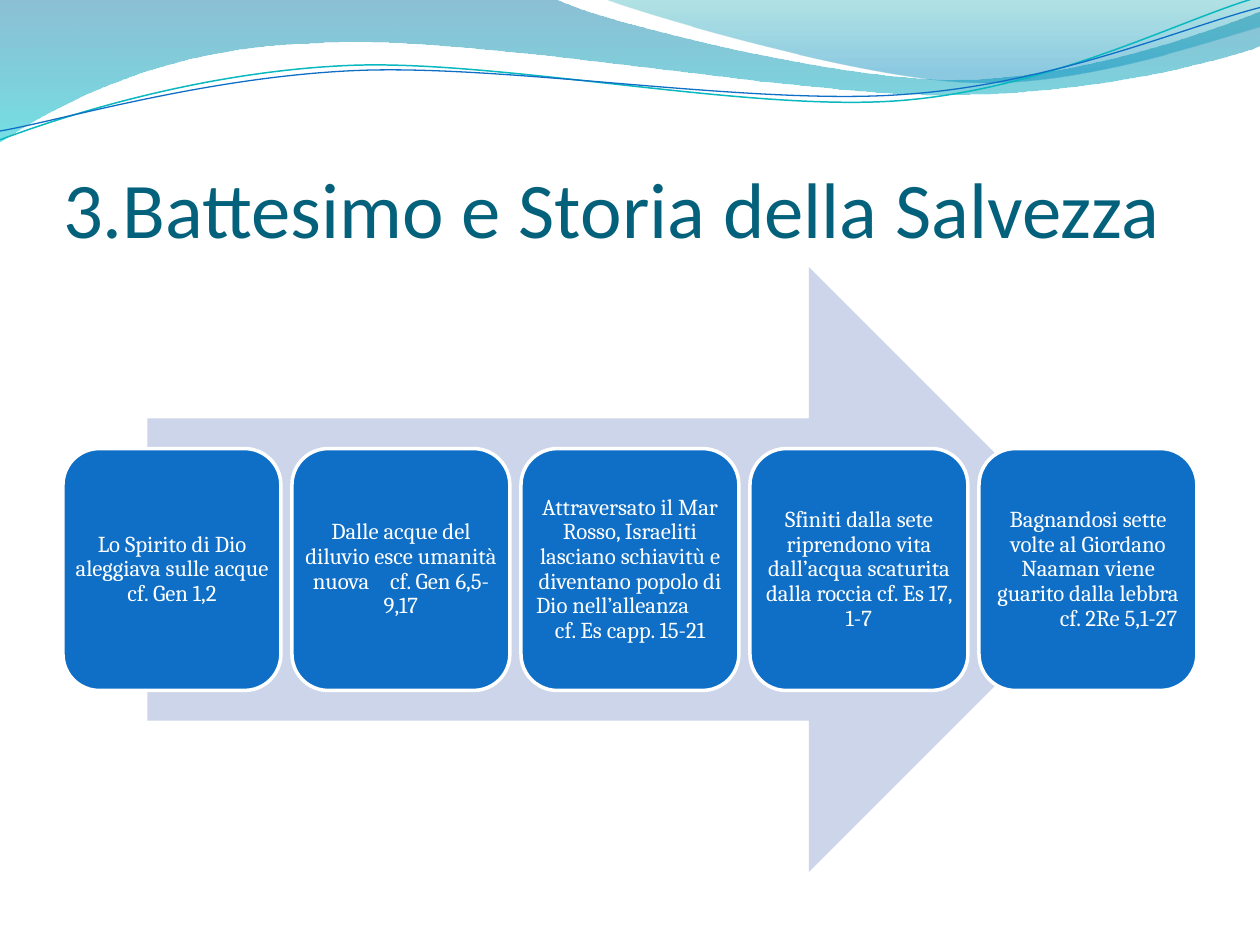
"""Build the slide on baptism and the history of salvation."""
from dataclasses import dataclass

from pptx import Presentation
from pptx.dml.color import RGBColor
from pptx.enum.shapes import MSO_SHAPE
from pptx.enum.text import MSO_ANCHOR, MSO_AUTO_SIZE, PP_ALIGN
from pptx.oxml.ns import qn
from pptx.shapes.autoshape import Shape
from pptx.slide import Slide
from pptx.util import Inches, Pt

ARROW, ROUNDED = MSO_SHAPE.RIGHT_ARROW, MSO_SHAPE.ROUNDED_RECTANGLE
MIDDLE, BOTTOM = MSO_ANCHOR.MIDDLE, MSO_ANCHOR.BOTTOM
CENTER, LEFT = PP_ALIGN.CENTER, PP_ALIGN.LEFT
NO_AUTOFIT = MSO_AUTO_SIZE.NONE
TITLE_ONLY = 5
BREAK = "\v"

COLORS = {
    "title": "04617B", "arrow": "CCD5EA", "card": "0F6FC6", "white": "FFFFFF",
    "deep": "0074A1", "aqua": "00C6CF", "teal": "00A1A9", "sky": "008BBF",
    "ribbon": "0AB8BF",
}


@dataclass
class Stop:
    position: float
    color: str
    opacity: int


@dataclass
class Wave:
    """An outline of pieces: 2 numbers for a line, 6 for a cubic curve."""
    start: tuple[float, float]
    pieces: list[tuple[float, ...]]
    stops: tuple[Stop, ...] = ()
    line: str = ""
    width: float = 0


@dataclass
class Gap:
    """A single space widened by some points."""
    points: float


WAVES = [
    Wave((0, 0), [
        (4.4, -0.01), (4.76, 0.17, 6.64, 0.63, 7.58, 0.63),
        (8.53, 0.63, 9.58, 0.26, 10, 0.09), (10.01, 0.36),
        (9.83, 0.44, 8.7, 0.76, 7.46, 0.75),
        (6.22, 0.75, 3.82, 0.28, 2.57, 0.34),
        (1.29, 0.36, 0.46, 0.83, -0.01, 1.13)],
        stops=(Stop(0, "deep", 45), Stop(1, "aqua", 55))),
    Wave((4.79, -0.01), [
        (5.09, 0.11, 6.82, 0.62, 7.69, 0.65),
        (8.56, 0.69, 9.61, 0.32, 10, 0.21), (10, 0)],
        stops=(Stop(0, "teal", 30), Stop(0.8, "sky", 45))),
    Wave((0, 1.11), [
        (0.48, 0.93, 1.58, 0.57, 2.77, 0.52),
        (3.95, 0.47, 5.93, 0.89, 7.13, 0.8),
        (8.33, 0.71, 9.38, 0.15, 9.98, -0.02)], line="ribbon", width=0.85),
    Wave((0, 1.04), [
        (0.47, 0.96, 1.64, 0.61, 2.83, 0.56),
        (4.03, 0.51, 5.97, 0.84, 7.17, 0.75),
        (8.36, 0.67, 9.41, 0.21, 10, 0.06)], line="card", width=0.75),
]

EVENTS = [
    ["Lo Spirito di Dio aleggiava sulle acque cf. Gen 1,2"],
    ["Dalle acque del diluvio esce umanità nuova", Gap(9), "cf. Gen 6,5-",
     BREAK, "9,17"],
    ["Attraversato il Mar Rosso, Israeliti lasciano schiavitù e diventano "
     "popolo di Dio nell’alleanza", Gap(17), BREAK, "cf. Es capp. 15-21"],
    ["Sfiniti dalla sete riprendono vita dall’acqua scaturita dalla roccia "
     "cf. Es 17, 1-7"],
    ["Bagnandosi sette volte al Giordano Naaman viene guarito dalla lebbra",
     BREAK, Gap(32), "cf. 2Re 5,1-27"],
]


def rgb(name: str) -> RGBColor:
    return RGBColor.from_string(COLORS[name])


def bend_curves(shape: Shape, pieces: list[tuple[float, ...]]) -> None:
    segments = iter(list(shape._element.iter(qn("a:lnTo"))))
    for piece in pieces:
        segment = next(segments)
        if len(piece) == 6:
            curve = segment.makeelement(qn("a:cubicBezTo"), {})
            segment.addprevious(curve)
            for control in (segment, next(segments), next(segments)):
                curve.append(control[0])
                control.getparent().remove(control)


def fill_gradient(shape: Shape, stops: tuple[Stop, ...]) -> None:
    shape.fill.gradient()
    shape.fill.gradient_angle = 270
    for target, stop in zip(shape.fill.gradient_stops, stops):
        target.position = stop.position
        target.color.rgb = rgb(stop.color)
    tints = shape.fill._xPr.iter(qn("a:srgbClr"))
    for tint, stop in zip(tints, stops):
        alpha = tint.makeelement(qn("a:alpha"), {"val": str(stop.opacity * 1000)})
        tint.append(alpha)


def add_wave(page: Slide, wave: Wave) -> None:
    builder = page.shapes.build_freeform(*map(Inches, wave.start))
    points = [(Inches(piece[at]), Inches(piece[at + 1]))
              for piece in wave.pieces for at in range(0, len(piece), 2)]
    builder.add_line_segments(points, close=bool(wave.stops))
    shape = builder.convert_to_shape()
    bend_curves(shape, wave.pieces)
    shape.shadow.inherit = False
    if wave.stops:
        fill_gradient(shape, wave.stops)
        shape.line.fill.background()
    else:
        shape.fill.background()
        shape.line.color.rgb = rgb(wave.line)
        shape.line.width = Pt(wave.width)


def add_title(page: Slide, text: str) -> None:
    title = page.shapes.title
    title.left, title.top = Inches(0.5), Inches(0.77)
    title.width, title.height = Inches(9), Inches(1.25)
    frame = title.text_frame
    frame.text = text
    frame.auto_size = NO_AUTOFIT
    frame.vertical_anchor = BOTTOM
    frame.margin_left = frame.margin_right = frame.margin_bottom = 0
    para = frame.paragraphs[0]
    para.alignment = LEFT
    para.font.size, para.font.name = Pt(45), "Calibri"
    para.font.color.rgb = rgb("title")


def add_arrow(page: Slide) -> None:
    arrow = page.shapes.add_shape(
        ARROW, Inches(1.17), Inches(2.12), Inches(7.65), Inches(4.8))
    arrow.shadow.inherit = False
    arrow.fill.solid()
    arrow.fill.fore_color.rgb = rgb("arrow")
    arrow.line.fill.background()


def add_event(page: Slide, left: float, parts: list[str | Gap]) -> None:
    card = page.shapes.add_shape(
        ROUNDED, Inches(left), Inches(3.56), Inches(1.73), Inches(1.92))
    card.shadow.inherit = False
    card.fill.solid()
    card.fill.fore_color.rgb = rgb("card")
    card.line.color.rgb = rgb("white")
    card.line.width = Pt(2)
    frame = card.text_frame
    frame.word_wrap = True
    frame.vertical_anchor = MIDDLE
    frame.margin_left = frame.margin_right = 0
    frame.margin_top = frame.margin_bottom = 0
    para = frame.paragraphs[0]
    para.alignment, para.line_spacing = CENTER, 0.9
    para.font.size, para.font.name = Pt(13), "Cambria"
    para.font.color.rgb = rgb("white")
    for part in parts:
        if part == BREAK:
            para.add_line_break()
            continue
        span = para.add_run()
        if isinstance(part, Gap):
            span.text = " "
            span.font._element.set("spc", str(round(part.points * 100)))
        else:
            span.text = part


def main() -> None:
    deck = Presentation()
    deck.slide_width, deck.slide_height = Inches(10), Inches(7.5)
    page = deck.slides.add_slide(deck.slide_layouts[TITLE_ONLY])
    for wave in WAVES:
        add_wave(page, wave)
    add_title(page, "3.Battesimo e Storia della Salvezza")
    add_arrow(page)
    for index, parts in enumerate(EVENTS):
        add_event(page, 0.5 + index * (9 - 1.73) / 4, parts)
    deck.save("out.pptx")


if __name__ == "__main__":
    main()
